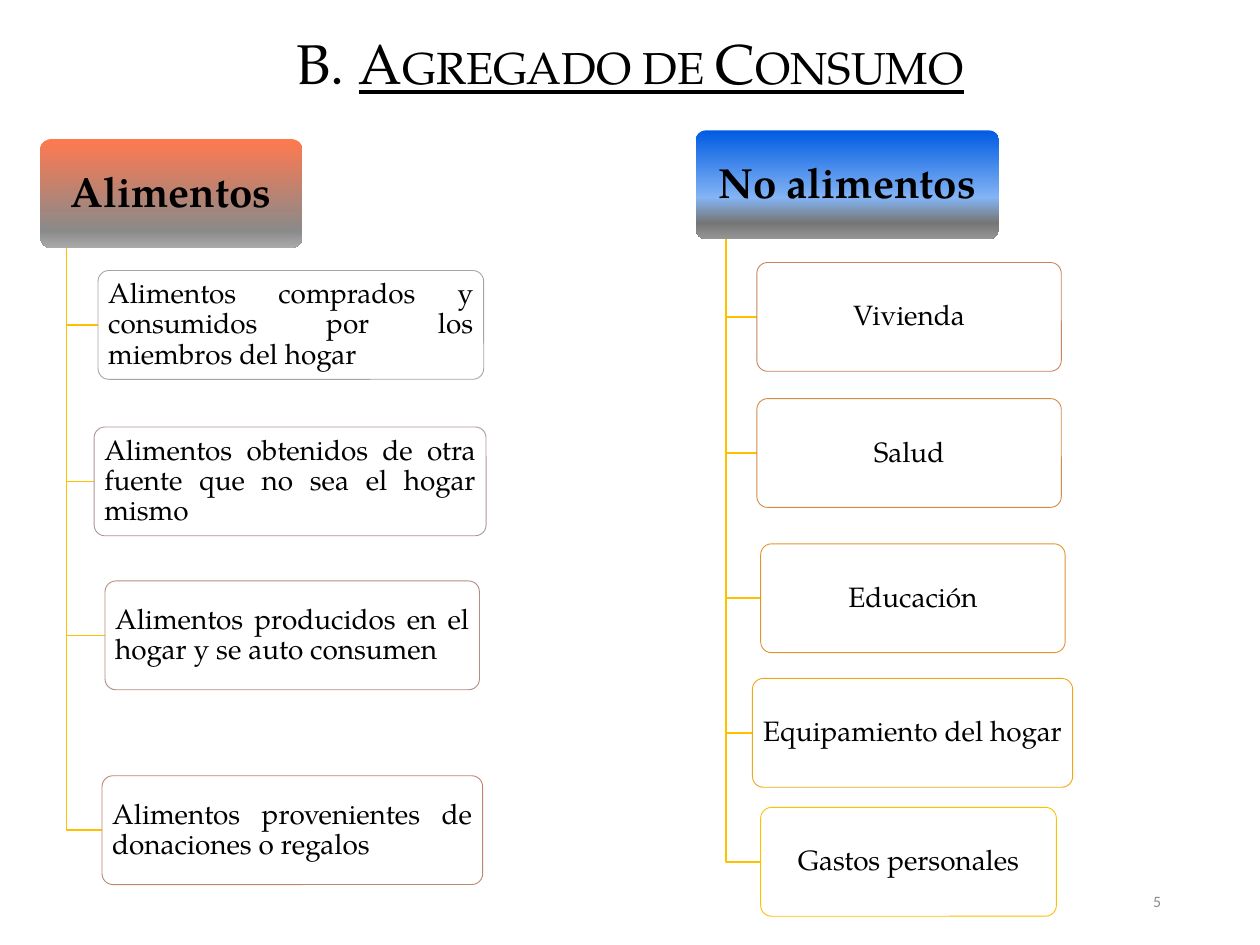
import colorsys
from dataclasses import dataclass

from lxml import etree
from pptx import Presentation
from pptx.dml.color import RGBColor
from pptx.enum import shapes, text
from pptx.oxml import ns
from pptx.util import Pt


@dataclass(frozen=True)
class Theme:
    font: str = "TeX Gyre Pagella"
    number_font: str = "Calibri"
    ink: str = "000000"
    paper: str = "FFFFFF"
    grey: str = "8C8C8C"
    stem: str = "FFC000"
    food: tuple = ((0, "FF794F"), (84, "8A8A8A"), (100, "AAAAAA"))
    non_food: tuple = ((0, "005BE2"), (62, "84B4F4"), (85, "767676"), (100, "959595"))
    title_size: int = 32
    head_size: int = 24
    item_size: int = 16
    number_size: int = 9


THEME = Theme()
BOX_H = 62.2
JUSTIFY, CENTER, RIGHT = text.PP_ALIGN.JUSTIFY, text.PP_ALIGN.CENTER, text.PP_ALIGN.RIGHT

# Each item: text, left, top, width
FOOD = [
    ("Alimentos comprados y consumidos por los miembros del hogar", 56, 154.6, 220.4),
    ("Alimentos obtenidos de otra fuente que no sea el hogar mismo", 53.8, 244, 224),
    ("Alimentos producidos en el hogar y se auto consumen", 60, 332, 214),
    ("Alimentos provenientes de donaciones o regalos", 58.3, 443.3, 217.5),
]
NON_FOOD = [
    ("Vivienda", 432.5, 150, 174),
    ("Salud", 432.5, 227.8, 174),
    ("Educación", 434.7, 310.8, 174),
    ("Equipamiento del hogar", 430, 387.7, 183),
    ("Gastos personales", 434.7, 461.4, 169),
]


def rgb(value):
    return RGBColor.from_string(value)


def outline_color(step, last):
    """Blend from mid grey to pure amber in hue, lightness and saturation."""
    t = step / last
    parts = colorsys.hls_to_rgb(45.2 / 360 * t, 0.647 - 0.147 * t, t)
    return RGBColor(*(round(255 * part) for part in parts))


def style_paragraph(p, size, align, color=THEME.ink, font=THEME.font, bold=False):
    p.alignment = align
    p.font.size, p.font.name, p.font.bold = Pt(size), font, bold
    p.font.color.rgb = rgb(color)


def fill_gradient(s, stops):
    s.fill.gradient()
    s.fill.gradient_angle = 270
    stop_list = s._element.spPr.find(".//" + ns.qn("a:gsLst"))
    for stop in list(stop_list):
        stop_list.remove(stop)
    for position, color in stops:
        stop = etree.SubElement(stop_list, ns.qn("a:gs"), pos=str(position * 1000))
        etree.SubElement(stop, ns.qn("a:srgbClr"), val=color)


def add_box(slide, words, left, top, width, size, align, inset, bold=False):
    s = slide.shapes.add_shape(shapes.MSO_SHAPE.ROUNDED_RECTANGLE,
                               Pt(left), Pt(top), Pt(width), Pt(BOX_H))
    s.adjustments[0] = 0.1
    s.shadow.inherit = False
    tf = s.text_frame
    tf.word_wrap = True
    tf.vertical_anchor = text.MSO_ANCHOR.MIDDLE
    tf.margin_left = tf.margin_right = Pt(inset)
    tf.margin_top = tf.margin_bottom = Pt(inset - 1)
    p = tf.paragraphs[0]
    p.text = words
    p.line_spacing = 0.9
    style_paragraph(p, size, align, bold=bold)
    return s


def add_stem(slide, x, top, end_x, end_y):
    builder = slide.shapes.build_freeform(Pt(x), Pt(top))
    builder.add_line_segments([(Pt(x), Pt(end_y)), (Pt(end_x), Pt(end_y))], close=False)
    s = builder.convert_to_shape()
    s.shadow.inherit = False
    s.fill.background()
    s.line.color.rgb = rgb(THEME.stem)
    s.line.width = Pt(1)


def add_branch(slide, heading, left, top, width, stops, items, align, colors):
    head = add_box(slide, heading, left, top, width, THEME.head_size, CENTER, 5, bold=True)
    fill_gradient(head, stops)
    head.line.fill.background()
    for (words, x, y, w), color in zip(items, colors):
        add_stem(slide, left + width / 10, top + BOX_H, x, y + BOX_H / 2)
        s = add_box(slide, words, x, y, w, THEME.item_size, align, 4)
        s.fill.solid()
        s.fill.fore_color.rgb = rgb(THEME.paper)
        s.line.color.rgb = color
        s.line.width = Pt(0.5)


def add_title(slide):
    s = slide.shapes.title
    s.left, s.top, s.width, s.height = Pt(36), Pt(16.5), Pt(648), Pt(42.5)
    tf = s.text_frame
    tf.auto_size = text.MSO_AUTO_SIZE.NONE
    tf.vertical_anchor = text.MSO_ANCHOR.MIDDLE
    p = tf.paragraphs[0]
    p.line_spacing = 0.9
    style_paragraph(p, THEME.title_size, CENTER)
    p.add_run().text = "B. "
    r = p.add_run()
    r.text = "Agregado de Consumo"
    r.font.underline = True
    r.font._element.set("cap", "small")


def add_page_number(slide, number):
    s = slide.shapes.add_textbox(Pt(508.5), Pt(500.5), Pt(162), Pt(28.8))
    tf = s.text_frame
    tf.word_wrap = True
    tf.vertical_anchor = text.MSO_ANCHOR.MIDDLE
    p = tf.paragraphs[0]
    p.text = number
    style_paragraph(p, THEME.number_size, RIGHT, THEME.grey, THEME.number_font)


def main():
    prs = Presentation()
    prs.slide_width, prs.slide_height = Pt(720), Pt(540)
    slide = prs.slides.add_slide(prs.slide_layouts[5])

    # Title and page number
    add_title(slide)
    add_page_number(slide, "5")

    # The two branches share one run of outline colours
    count = len(FOOD) + len(NON_FOOD)
    colors = [outline_color(i, count - 1) for i in range(count)]
    add_branch(slide, "Alimentos", 23, 79.5, 149.8, THEME.food,
               FOOD, JUSTIFY, colors[:len(FOOD)])
    add_branch(slide, "No alimentos", 397.5, 74.5, 173.5, THEME.non_food,
               NON_FOOD, CENTER, colors[len(FOOD):])

    prs.save("out.pptx")


if __name__ == "__main__":
    main()
